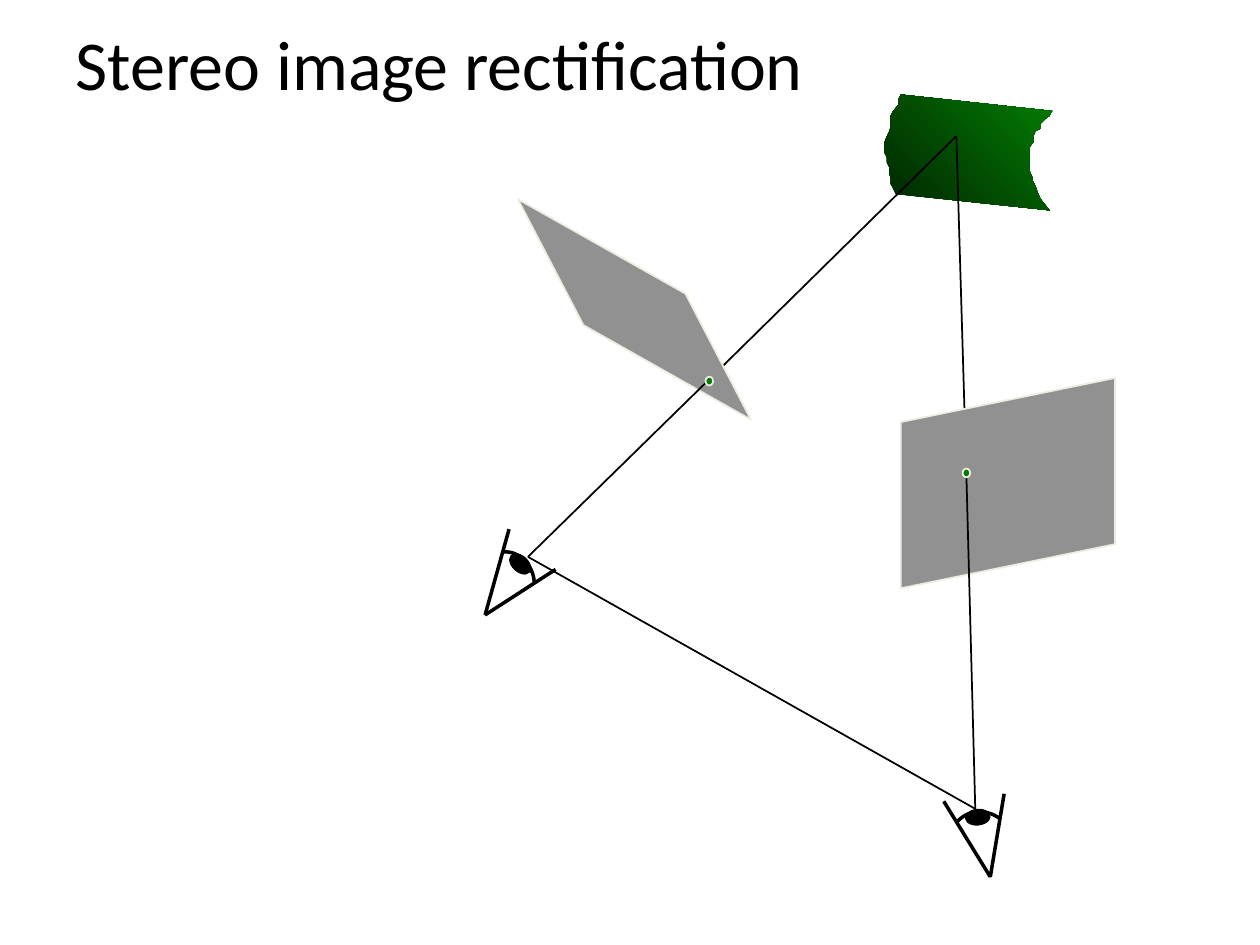
from lxml import etree
from pptx import Presentation
from pptx.dml import color
from pptx.enum import shapes, text
from pptx.oxml import ns
from pptx.util import Pt

COLORS = {"ink": "000000", "plane": "919191", "edge": "EEECE1",
          "dark_green": "012501", "green": "037C03"}
RGB = {name: color.RGBColor.from_string(value) for name, value in COLORS.items()}

presentation = Presentation()
presentation.slide_width, presentation.slide_height = Pt(720), Pt(540)
slide = presentation.slides.add_slide(presentation.slide_layouts[5])


def paint(shape, fill=None, line=None, width=1.0):
    """Set fill and line, or remove them, and drop the shadow."""
    if line:
        shape.line.color.rgb = RGB[line]
        shape.line.width = Pt(width)
    else:
        shape.line.fill.background()
    if shape.shape_type == shapes.MSO_SHAPE_TYPE.LINE:
        etree.SubElement(shape._element.spPr, ns.qn("a:effectLst"))
        return
    shape.shadow.inherit = False
    if fill:
        shape.fill.solid()
        shape.fill.fore_color.rgb = RGB[fill]
    else:
        shape.fill.background()


def draw(points, close=False):
    """Two open points give a connector, more give a freeform."""
    points = [(Pt(x), Pt(y)) for x, y in points]
    if len(points) == 2:
        return slide.shapes.add_connector(
            shapes.MSO_CONNECTOR.STRAIGHT, *points[0], *points[1])
    builder = slide.shapes.build_freeform(*points[0])
    builder.add_line_segments(points[1:], close=close)
    return builder.convert_to_shape()


# Title
title = slide.shapes.title
title_box = {"left": Pt(36), "top": Pt(0), "width": Pt(648), "height": Pt(72)}
for name, value in title_box.items():
    setattr(title, name, value)
title.text_frame.text = "Stereo image rectification"
title.text_frame.vertical_anchor = text.MSO_ANCHOR.MIDDLE
paragraph = title.text_frame.paragraphs[0]
paragraph.alignment = text.PP_ALIGN.LEFT
font = paragraph.runs[0].font
for name, value in {"name": "Calibri", "size": Pt(40)}.items():
    setattr(font, name, value)
font.color.rgb = RGB["ink"]

# Scene surface with ragged sides
surface_left = [
    (514.8, 54), (513.4, 56.9), (513.4, 59.8), (510.5, 63.4), (509, 66.2),
    (509, 72), (508.3, 74.9), (506.9, 77.8), (505.4, 81.4), (505.4, 87.1),
    (506.9, 90), (506.9, 92.9), (508.3, 95.8), (508.3, 99.4), (509, 102.2),
    (509, 105.1), (510.5, 108), (511.9, 110.9)]
surface_right = [
    (599.8, 120.2), (594.7, 113.8), (593.3, 110.9), (591.8, 106.6),
    (590.4, 103.7), (589.7, 100.8), (588.2, 97.2), (588.2, 84.2),
    (590.4, 81.4), (590.4, 77.8), (591.8, 74.9), (594.7, 73.4),
    (594.7, 70.6), (597.6, 67.7), (599.8, 66.2), (601.2, 63.4)]
surface = draw(surface_left + surface_right, close=True)
paint(surface)
surface.fill.gradient()
surface.fill.gradient_angle = 45
for stop, name in zip(surface.fill.gradient_stops, ("dark_green", "green")):
    stop.color.rgb = RGB[name]

# Baseline between the eyes
scene_point = (546.5, 77.8)
left_eye, right_eye = (301.7, 318.2), (557.3, 462.2)
paint(draw([left_eye, right_eye]), line="ink")

# Each view: ray behind the plane, image plane, ray in front of it
views = [
    (left_eye, (405.4, 216.7),
     [(333.4, 185.8), (429.1, 239.8), (391.7, 167.8), (295.9, 113.8)]),
    (right_eye, (552.2, 270),
     [(514.8, 241.2), (514.8, 336.2), (637.2, 311), (637.2, 216)]),
]
for eye, image_point, corners in views:
    paint(draw([image_point, scene_point]), line="ink")
    paint(draw(corners, close=True), fill="plane", line="edge")
    paint(draw([eye, image_point]), line="ink")

# Eyes: apex, lid ends, Bezier points of the eyeball arc, pupil corner and turn
eyes = [
    ((565.9, 501.1), [(539.3, 457.9), (573.8, 453.6)],
     [(546.5, 470.2), (552.2, 463), (563, 461.5), (571.7, 468)],
     (554.4, 460.1), 264.6),
    ((277.2, 351.4), [(290.9, 302.4), (317.5, 325.4)],
     [(287.3, 315.4), (296.6, 314.6), (304.6, 322.6), (305.3, 332.6)],
     (293, 315.4), 312.5),
]
STEPS = 16
for apex, lids, controls, pupil_corner, turn in eyes:
    arc = []
    for step in range(STEPS + 1):
        t = step / STEPS
        weights = ((1 - t) ** 3, 3 * t * (1 - t) ** 2, 3 * t ** 2 * (1 - t), t ** 3)
        arc.append([sum(w * c for w, c in zip(weights, axis))
                    for axis in zip(*controls)])
    paint(draw([apex] + arc, close=True), line="ink", width=0.75)
    paint(draw(arc), line="ink", width=2)
    for lid in lids:
        paint(draw([lid, apex]), line="ink", width=2)
    pupil = slide.shapes.add_shape(
        shapes.MSO_SHAPE.OVAL, *map(Pt, pupil_corner), Pt(8.6), Pt(13.7))
    pupil.rotation = turn
    paint(pupil, fill="ink", line="ink")

# Image points
for left, top in [(550.1, 267.8), (403.2, 215.3)]:
    dot = slide.shapes.add_shape(
        shapes.MSO_SHAPE.OVAL, Pt(left), Pt(top), Pt(4.3), Pt(5))
    paint(dot, fill="green", line="edge")

presentation.save("out.pptx")
